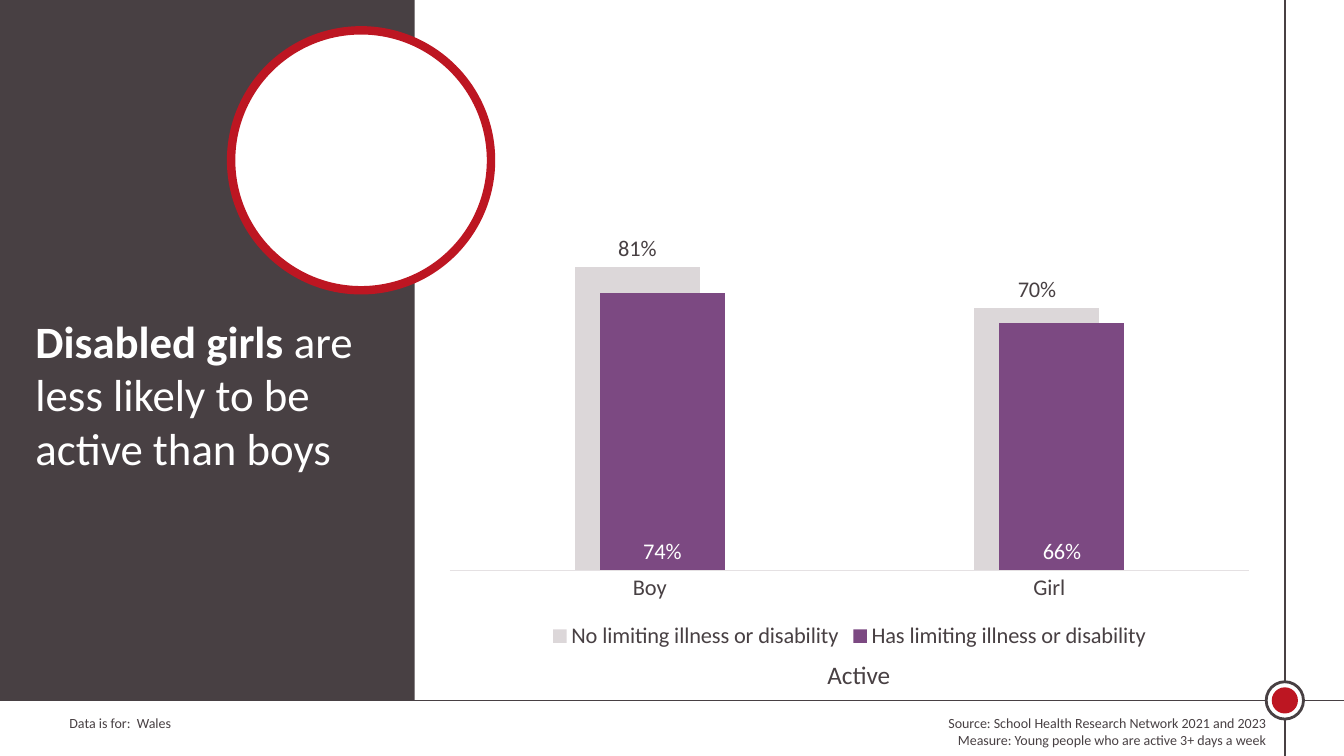
from lxml import etree
from pptx import Presentation
from pptx.chart.data import CategoryChartData
from pptx.dml.color import RGBColor
from pptx.enum.chart import XL_CHART_TYPE as ChartType, XL_LABEL_POSITION as LabelPosition
from pptx.enum.chart import XL_LEGEND_POSITION as LegendPosition, XL_TICK_MARK as TickMark
from pptx.enum.shapes import MSO_CONNECTOR as Connector, MSO_SHAPE as Preset
from pptx.enum.text import MSO_ANCHOR as Anchor, MSO_AUTO_SIZE as AutoSize, PP_ALIGN as Align
from pptx.oxml.ns import qn
from pptx.util import Cm, Pt

WIDTH, HEIGHT = 33.87, 19.05
RULE_X, RULE_Y = 32.38, 17.65
DARK, RED, WHITE = "484043", "BD1622", "FFFFFF"
GREY, PURPLE, AXIS = "DCD7D9", "7C4982", "E5E1E3"


def rgb(color):
    return RGBColor.from_string(color)


def set_attributes(target, values):
    for name, value in values.items():
        setattr(target, name, value)


def format_font(font, size, color=DARK, bold=False):
    set_attributes(font, {"name": "Calibri", "size": Pt(size), "bold": bold})
    font.color.rgb = rgb(color)


def place(shape, left, top, width, height):
    set_attributes(shape, {"left": Cm(left), "top": Cm(top),
                           "width": Cm(width), "height": Cm(height)})


def add_text(slide, box, lines, size, align=Align.LEFT):
    frame = slide.shapes.add_textbox(*map(Cm, box)).text_frame
    frame.word_wrap = True
    frame.text = "\n".join(lines)
    for paragraph in frame.paragraphs:
        paragraph.alignment = align
        format_font(paragraph.runs[0].font, size)


def add_filled(slide, preset, box, fill, line=None, weight=0):
    shape = slide.shapes.add_shape(preset, *map(Cm, box))
    shape.shadow.inherit = False
    shape.fill.solid()
    shape.fill.fore_color.rgb = rgb(fill)
    if line:
        shape.line.color.rgb = rgb(line)
        shape.line.width = Pt(weight)
    else:
        shape.line.fill.background()


def add_circle(slide, center_x, center_y, diameter, *colors):
    box = (center_x - diameter / 2, center_y - diameter / 2, diameter, diameter)
    add_filled(slide, Preset.OVAL, box, *colors)


def add_rule(slide, *ends):
    rule = slide.shapes.add_connector(Connector.STRAIGHT, *map(Cm, ends))
    rule.line.color.rgb = rgb(DARK)
    rule.line.width = Pt(1)
    etree.SubElement(rule._element.spPr, qn("a:effectLst"))


def set_headline(slide, box, parts):
    """Fill the title from (text, bold) parts and bring it in front of the panel."""
    title = slide.shapes.title
    place(title, *box)
    set_attributes(title.text_frame, {"word_wrap": True, "vertical_anchor": Anchor.TOP,
                                      "auto_size": AutoSize.NONE})
    paragraph = title.text_frame.paragraphs[0]
    paragraph.alignment = Align.LEFT
    for text, bold in parts:
        run = paragraph.add_run()
        run.text = text
        format_font(run.font, 32, WHITE, bold)
    title._element.getparent().append(title._element)


def format_series(series, fill, label_color, position):
    series.format.fill.solid()
    series.format.fill.fore_color.rgb = rgb(fill)
    labels = series.data_labels
    set_attributes(labels, {"show_value": True, "number_format": "0%",
                            "number_format_is_linked": False, "position": position})
    format_font(labels.font, 16, label_color)


def add_activity_chart(slide, box):
    data = CategoryChartData(number_format="0%")
    data.categories = ["Boy", "Girl"]
    data.add_series("No limiting illness or disability", (0.81, 0.7))
    data.add_series("Has limiting illness or disability", (0.74, 0.66))
    chart = slide.shapes.add_chart(ChartType.COLUMN_CLUSTERED, *map(Cm, box), data).chart
    set_attributes(chart, {"has_title": False, "has_legend": True})
    format_font(chart.font, 16)
    set_attributes(chart.legend, {"position": LegendPosition.BOTTOM,
                                  "include_in_layout": False})
    format_font(chart.legend.font, 16)

    set_attributes(chart.value_axis, {"visible": False, "has_major_gridlines": False,
                                      "minimum_scale": 0, "maximum_scale": 1})
    category_axis = chart.category_axis
    category_axis.major_tick_mark = TickMark.NONE
    category_axis.format.line.color.rgb = rgb(AXIS)
    category_axis.format.line.width = Pt(0.75)
    format_font(category_axis.tick_labels.font, 16)

    plot = chart.plots[0]
    set_attributes(plot, {"gap_width": 200, "overlap": 80, "vary_by_categories": False})
    without_illness, with_illness = plot.series
    format_series(without_illness, GREY, DARK, LabelPosition.OUTSIDE_END)
    format_series(with_illness, PURPLE, WHITE, LabelPosition.INSIDE_BASE)


def main():
    presentation = Presentation()
    set_attributes(presentation, {"slide_width": Cm(WIDTH), "slide_height": Cm(HEIGHT)})
    slide = presentation.slides.add_slide(presentation.slide_layouts[5])

    add_text(slide, (1.5, 17.88, 11.15, 0.69), ["Data is for: \u00a0Wales".replace("\u00a0", " ")], 10)
    add_rule(slide, RULE_X, 0, RULE_X, HEIGHT)
    add_rule(slide, 0, RULE_Y, WIDTH, RULE_Y)
    add_circle(slide, RULE_X, RULE_Y, 0.94, WHITE, DARK, 2)
    add_circle(slide, RULE_X, RULE_Y, 0.66, RED)
    add_filled(slide, Preset.RECTANGLE, (0, 0, 10.45, RULE_Y), DARK)
    add_circle(slide, 9.1, 4.04, 6.55, WHITE, RED, 6)
    add_text(slide, (15.72, 17.88, 16.43, 1.12),
             ["Source: School Health Research Network 2021 and 2023",
              "Measure: Young people who are active 3+ days a week"], 10, Align.RIGHT)

    set_headline(slide, (0.64, 7.77, 8.71, 5.74),
                 [("Disabled girls", True), (" are less likely to be active than boys", False)])
    add_text(slide, (20.6, 16.48, 3.1, 1.02), ["Active"], 18)
    add_activity_chart(slide, (10.92, 4.7, 20.98, 11.79))
    presentation.save("out.pptx")


if __name__ == "__main__":
    main()
